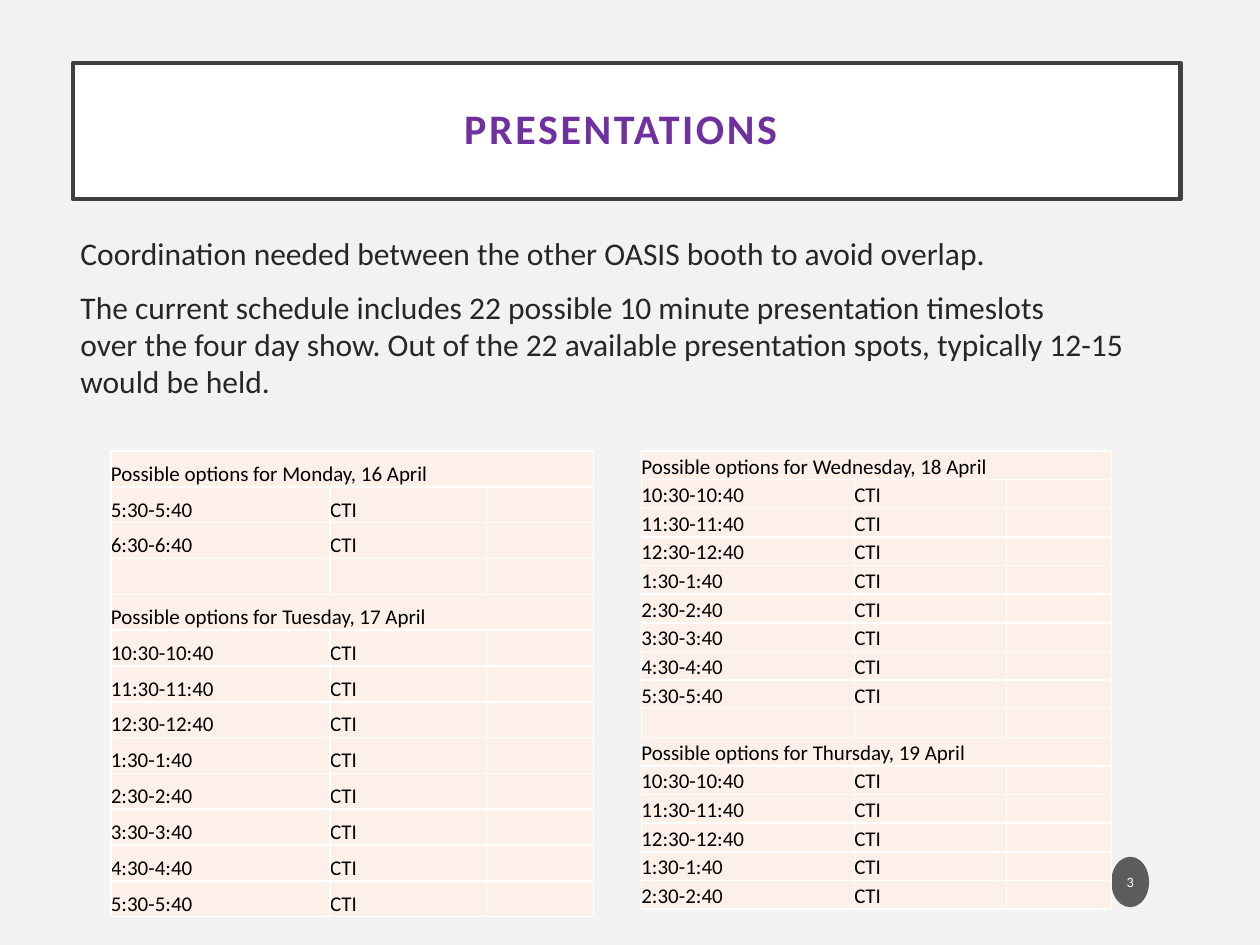
import pptx
import pptx.dml.color
import pptx.enum.shapes
import pptx.enum.text
import pptx.oxml.ns
import pptx.util
from lxml import etree
from pptx.dml.color import RGBColor
from pptx.util import Inches

BACKGROUND = RGBColor(0xF2, 0xF2, 0xF2)
WHITE = RGBColor(0xFF, 0xFF, 0xFF)
BLACK = RGBColor(0, 0, 0)
FRAME = RGBColor(0x40, 0x40, 0x40)
PURPLE = RGBColor(0x70, 0x30, 0xA0)
BODY = RGBColor(0x26, 0x26, 0x26)
BADGE = RGBColor(0x1D, 0x1D, 0x1D)
CELL = RGBColor(0xFD, 0xF0, 0xE8)

SHAPES = pptx.enum.shapes.MSO_SHAPE
ANCHOR = pptx.enum.text.MSO_ANCHOR
CENTER = pptx.enum.text.PP_ALIGN.CENTER

MONDAY_TIMES = ["5:30-5:40", "6:30-6:40"]
DAY_TIMES = ["10:30-10:40", "11:30-11:40", "12:30-12:40", "1:30-1:40",
             "2:30-2:40", "3:30-3:40", "4:30-4:40", "5:30-5:40"]


def add_element(parent, tag, **attributes):
    return etree.SubElement(parent, pptx.oxml.ns.qn(tag), attributes)


class SlideBuilder:
    """Holds the slide and the font that all its elements share."""

    font_name = "Calibri"

    def __init__(self, slide):
        self.slide = slide
        fill = slide.background.fill
        fill.solid()
        fill.fore_color.rgb = BACKGROUND

    def format_runs(self, paragraph, size, color, bold=False):
        for run in paragraph.runs:
            run.font.name = self.font_name
            run.font.size = pptx.util.Pt(size)
            run.font.color.rgb = color
            run.font.bold = bold

    def shape(self, preset, box, fill, text, size, color, margins, bold=False):
        """Add a filled shape with one centred line; margins are (side, top)."""
        shape = self.slide.shapes.add_shape(preset, *map(Inches, box))
        shape.shadow.inherit = False
        shape.fill.solid()
        shape.fill.fore_color.rgb = fill
        shape.line.fill.background()
        frame = shape.text_frame
        frame.margin_left = frame.margin_right = Inches(margins[0])
        frame.margin_top = frame.margin_bottom = Inches(margins[1])
        frame.vertical_anchor = ANCHOR.MIDDLE
        frame.text = text
        paragraph = frame.paragraphs[0]
        paragraph.alignment = CENTER
        self.format_runs(paragraph, size, color, bold)
        return shape

    def page_number(self, box, text):
        badge = self.shape(SHAPES.OVAL, box, BADGE, text, 8.2, WHITE, (0.02, 0.05))
        color = badge.fill._xPr.find(".//" + pptx.oxml.ns.qn("a:srgbClr"))
        add_element(color, "a:alpha", val="70000")

    def title(self, box, text):
        title = self.shape(SHAPES.RECTANGLE, box, WHITE, text, 24, PURPLE,
                           (0.2, 0.2), bold=True)
        title.line.color.rgb = FRAME
        title.line.width = pptx.util.Pt(2.5)
        paragraph = title.text_frame.paragraphs[0]
        paragraph.line_spacing = 0.9
        paragraph.runs[0].font._element.set("spc", "150")

    def body(self, box, texts):
        frame = self.slide.shapes.add_textbox(*map(Inches, box)).text_frame
        frame.word_wrap = True
        for index, text in enumerate(texts):
            paragraph = frame.add_paragraph() if index else frame.paragraphs[0]
            paragraph.text = text
            paragraph.line_spacing = 0.98
            if index:
                paragraph.space_before = pptx.util.Pt(10)
            self.format_runs(paragraph, 18, BODY)

    def cell(self, cell, text):
        cell.margin_left = cell.margin_right = 0
        cell.margin_top = cell.margin_bottom = 0
        cell.vertical_anchor = ANCHOR.BOTTOM
        properties = cell._tc.get_or_add_tcPr()
        for side in ("a:lnL", "a:lnR", "a:lnT", "a:lnB"):
            line = add_element(properties, side, w=str(pptx.util.Pt(1)))
            add_element(add_element(line, "a:solidFill"), "a:srgbClr", val=str(WHITE))
        cell.fill.solid()
        cell.fill.fore_color.rgb = CELL
        paragraph = cell.text_frame.paragraphs[0]
        if text:
            paragraph.text = text
            self.format_runs(paragraph, 12, BLACK)
        else:
            add_element(paragraph._p, "a:endParaRPr", sz="1200")

    def schedule(self, left, top, widths, height, days):
        """Add a table of days, each a heading row followed by its timeslots."""
        rows = []
        for heading, times in days:
            if rows:
                rows.append(("", "", ""))
            rows.append((heading, None, None))
            rows += [(time, "CTI", "") for time in times]
        graphic = self.slide.shapes.add_table(
            len(rows), len(widths), Inches(left), Inches(top),
            Inches(sum(widths)), Inches(height))
        table = graphic.table
        table.first_row = table.horz_banding = False
        for column, width in zip(table.columns, widths):
            column.width = Inches(width)
        for row_index, row in enumerate(rows):
            table.rows[row_index].height = Inches(height / len(rows))
            for column_index, text in enumerate(row):
                self.cell(table.cell(row_index, column_index), text)
            if row[1] is None:
                table.cell(row_index, 0).merge(table.cell(row_index, len(widths) - 1))


def main():
    presentation = pptx.Presentation()
    presentation.slide_width = Inches(10)
    presentation.slide_height = Inches(7.5)
    builder = SlideBuilder(presentation.slides.add_slide(presentation.slide_layouts[6]))

    builder.page_number((8.82, 6.8, 0.3, 0.4), "3")
    builder.title((0.58, 0.5, 8.79, 1.08), "PRESENTATIONS ")
    builder.body((0.54, 1.82, 8.83, 1.6), [
        "Coordination needed between the other OASIS booth to avoid overlap.",
        "The current schedule includes 22 possible 10 minute presentation timeslots\v"
        "over the four day show. Out of the 22 available presentation spots, "
        "typically 12-15 would be held.",
    ])
    builder.schedule(0.88, 3.58, (1.74, 1.24, 0.85), 3.7, [
        ("Possible options for Monday, 16 April", MONDAY_TIMES),
        ("Possible options for Tuesday, 17 April", DAY_TIMES),
    ])
    builder.schedule(5.09, 3.58, (1.69, 1.21, 0.83), 3.64, [
        ("Possible options for Wednesday, 18 April", DAY_TIMES),
        ("Possible options for Thursday, 19 April", DAY_TIMES[:5]),
    ])
    presentation.save("out.pptx")


if __name__ == "__main__":
    main()
